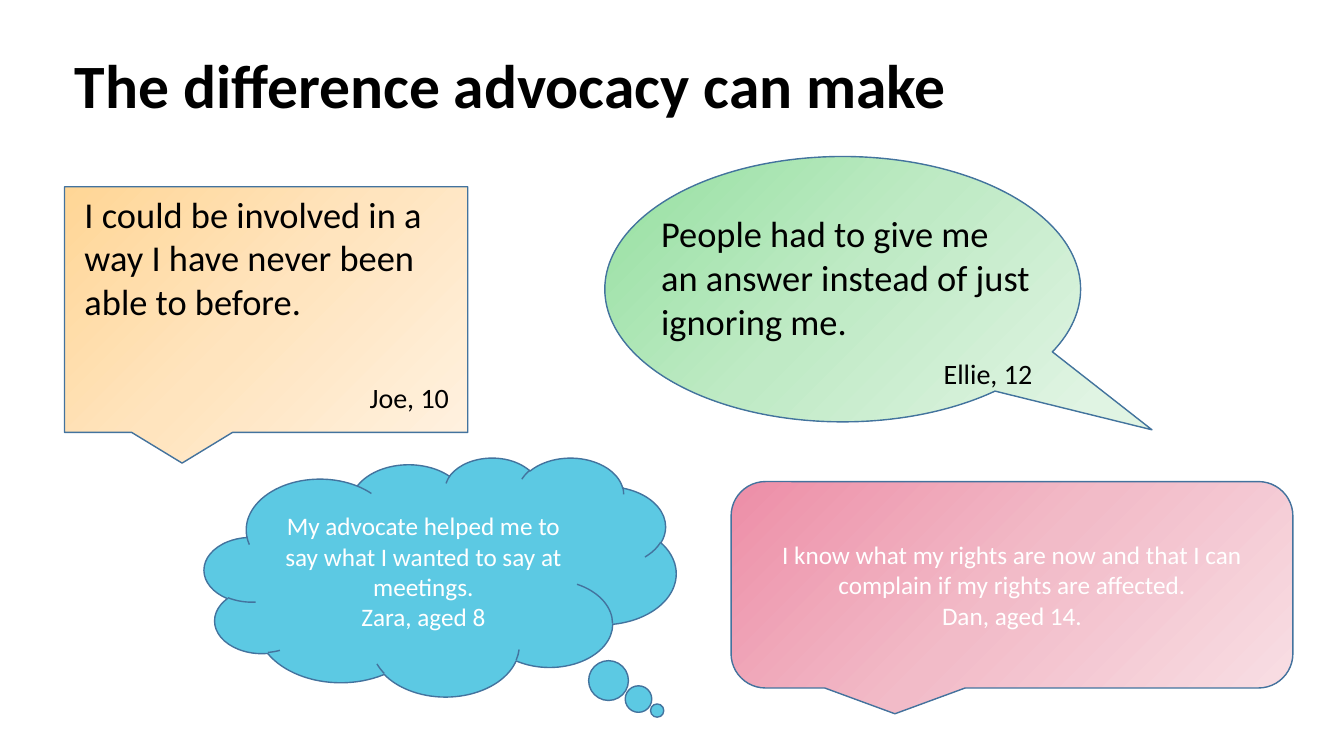
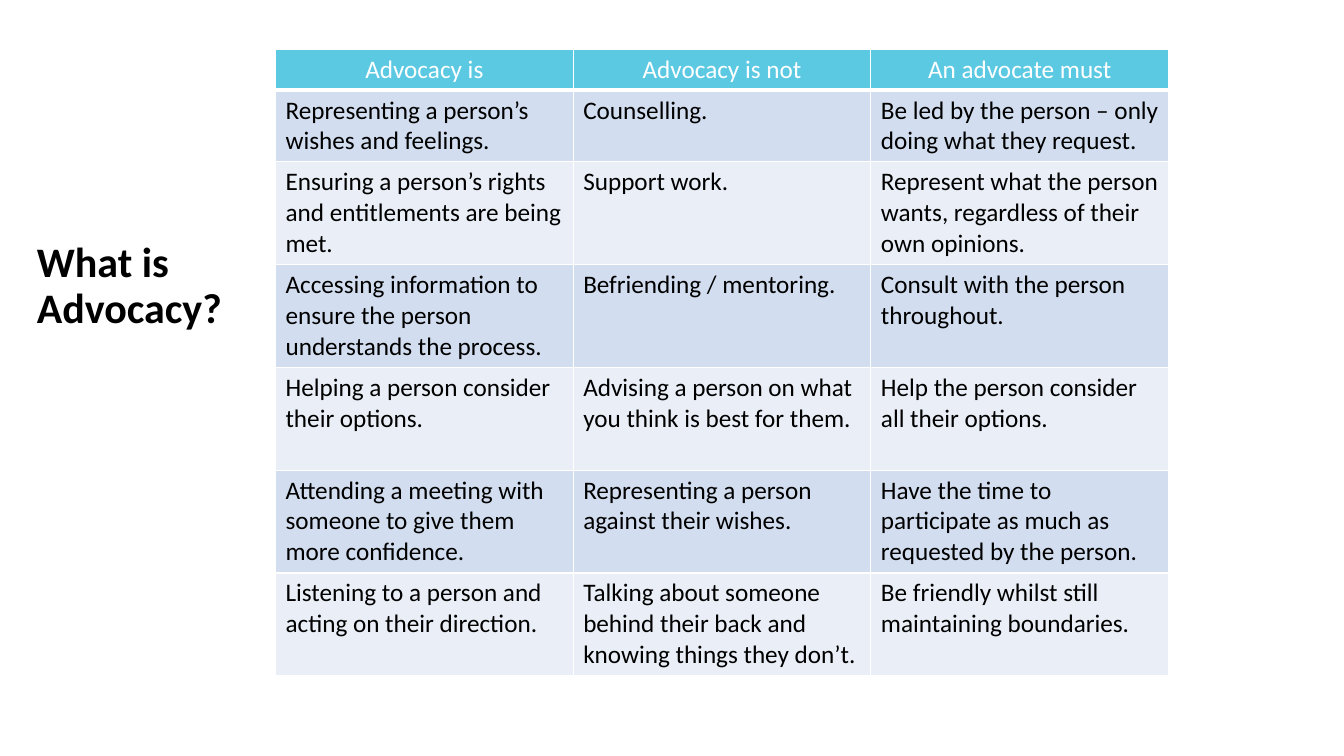
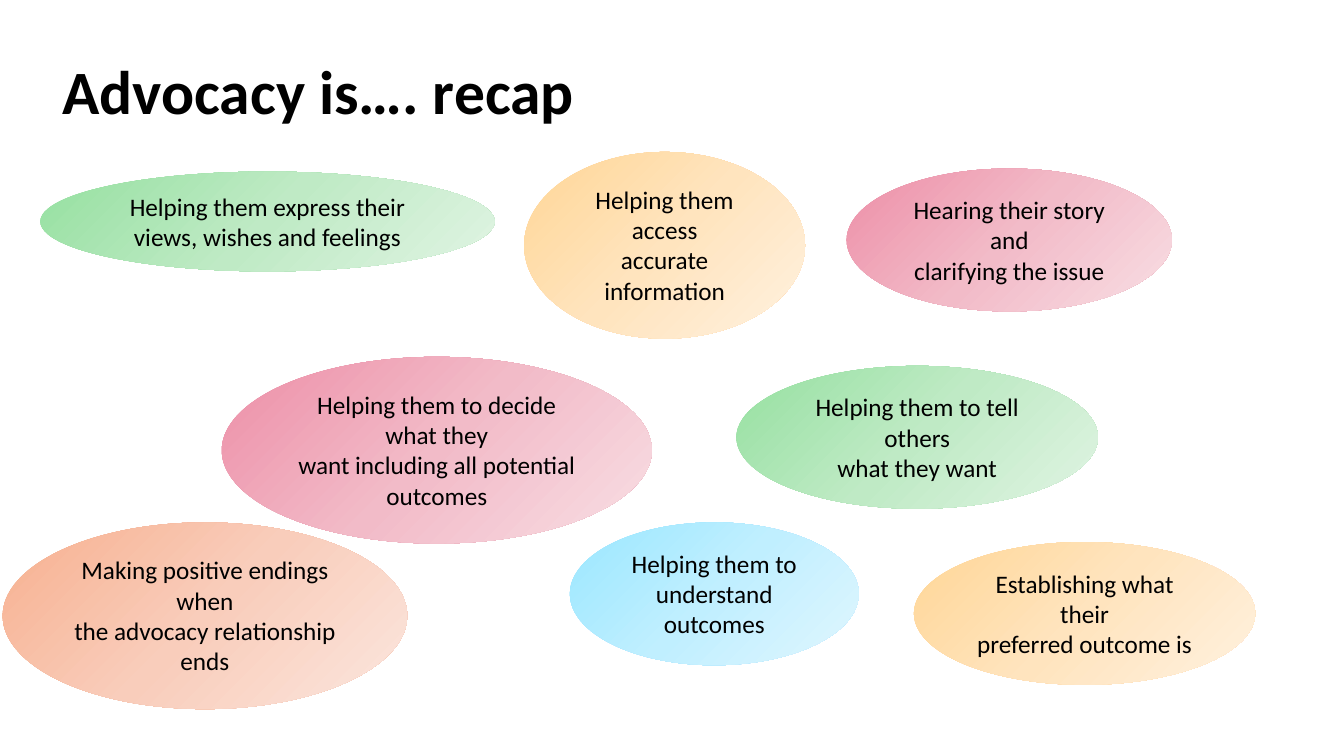
from dataclasses import dataclass

from lxml.etree import SubElement
from copy import deepcopy
from pptx import Presentation
from pptx.dml.color import RGBColor
from pptx.enum.shapes import MSO_SHAPE
from pptx.enum.text import MSO_ANCHOR, MSO_AUTO_SIZE, PP_ALIGN
from pptx.oxml.ns import qn
from pptx.util import Inches, Pt

WIDE, HIGH = Inches(13.333), Inches(7.5)
FONT = "Calibri"

# Colours
BLACK = RGBColor(0x00, 0x00, 0x00)
WHITE = RGBColor(0xFF, 0xFF, 0xFF)
EDGE = RGBColor(0x43, 0x73, 0x9E)
TEAL = RGBColor(0x5C, 0xC9, 0xE3)
BANDS = (RGBColor(0xD2, 0xDE, 0xEF), RGBColor(0xEA, 0xEF, 0xF7))

# Gradients: start, middle, end
AMBER = (RGBColor(0xFF, 0xD6, 0x96), RGBColor(0xFF, 0xE4, 0xBE), RGBColor(0xFF, 0xF1, 0xDF))
GREEN = (RGBColor(0x95, 0xE0, 0xA0), RGBColor(0xBF, 0xEA, 0xC5), RGBColor(0xE0, 0xF4, 0xE3))
PINK = (RGBColor(0xED, 0x8E, 0xA7), RGBColor(0xF2, 0xBB, 0xC8), RGBColor(0xF8, 0xDE, 0xE4))
CORAL = (RGBColor(0xF7, 0xB0, 0x8F), RGBColor(0xF9, 0xCD, 0xBB), RGBColor(0xFB, 0xE6, 0xDE))
SKY = (RGBColor(0x9A, 0xE7, 0xFF), RGBColor(0xC0, 0xEF, 0xFF), RGBColor(0xE0, 0xF6, 0xFE))


@dataclass
class Box:
    """Place and size in percent of the slide."""
    left: float
    top: float
    width: float
    height: float

    def emu(self) -> tuple:
        return (across(self.left), down(self.top),
                across(self.width), down(self.height))


@dataclass
class Bubble:
    box: Box
    fill: tuple | RGBColor
    lines: tuple = ()
    kind: MSO_SHAPE = MSO_SHAPE.OVAL
    tip: tuple = ()
    ink: RGBColor = BLACK
    edge: RGBColor | None = None
    anchor: MSO_ANCHOR = MSO_ANCHOR.TOP


@dataclass
class Quote:
    box: Box
    words: str
    name: str
    gap: float


def across(share: float) -> int:
    return int(WIDE * share / 100)


def down(share: float) -> int:
    return int(HIGH * share / 100)


def style(para, size: float, ink: RGBColor, align=PP_ALIGN.LEFT, bold: bool = False) -> None:
    para.alignment = align
    for run in para.runs:
        font = run.font
        font.name, font.size, font.bold = FONT, Pt(size), bold
        font.color.rgb = ink


def add_page(deck, text: str, box: Box, size: float):
    """Add a slide with its title."""
    page = deck.slides.add_slide(deck.slide_layouts[5])
    title = page.shapes.title
    title.left, title.top, title.width, title.height = box.emu()
    frame = title.text_frame
    frame.text = text
    frame.auto_size = MSO_AUTO_SIZE.NONE
    frame.vertical_anchor = MSO_ANCHOR.MIDDLE
    para = frame.paragraphs[0]
    para.line_spacing = 0.9
    style(para, size, BLACK, bold=True)
    return page


def shade(shape, hues: tuple) -> None:
    """Fill with three evenly spaced stops, slanting down to the right."""
    fill = shape.fill
    fill.gradient()
    fill.gradient_angle = 315
    stops = shape._element.spPr.find(qn("a:gradFill")).find(qn("a:gsLst"))
    stops.insert(1, deepcopy(stops[0]))
    for spot, (stop, hue) in enumerate(zip(fill.gradient_stops, hues)):
        stop.position = spot / 2
        stop.color.rgb = hue


def add_bubble(page, item: Bubble) -> None:
    shape = page.shapes.add_shape(item.kind, *item.box.emu())
    shape.shadow.inherit = False
    for spot, value in enumerate(item.tip):
        shape.adjustments[spot] = value
    if isinstance(item.fill, RGBColor):
        shape.fill.solid()
        shape.fill.fore_color.rgb = item.fill
    else:
        shade(shape, item.fill)
    if item.edge is None:
        shape.line.fill.background()
    else:
        shape.line.color.rgb = item.edge
        shape.line.width = Pt(1)
    if item.lines:
        frame = shape.text_frame
        frame.text = "\n".join(item.lines)
        frame.word_wrap = True
        frame.vertical_anchor = item.anchor
        for para in frame.paragraphs:
            style(para, 18, item.ink, PP_ALIGN.CENTER)


def add_quote(page, item: Quote) -> None:
    frame = page.shapes.add_textbox(*item.box.emu()).text_frame
    frame.word_wrap = True
    frame.text = item.words
    style(frame.paragraphs[0], 26, BLACK)
    name = frame.add_paragraph()
    name.text = item.name
    name.space_before = Pt(item.gap)
    style(name, 20, BLACK, PP_ALIGN.RIGHT)


def add_rule(cell, side: str, width: float) -> None:
    line = SubElement(cell._tc.get_or_add_tcPr(), qn(f"a:ln{side}"), w=str(Pt(width)))
    SubElement(SubElement(line, qn("a:solidFill")), qn("a:srgbClr"), val=str(WHITE))


def add_grid(page, box: Box, rows: tuple, heights: tuple) -> None:
    table = page.shapes.add_table(len(rows), len(rows[0]), *box.emu()).table
    table.horz_banding = False
    for row, high in zip(table.rows, heights):
        row.height = down(high)
    for r, texts in enumerate(rows):
        head = r == 0
        for c, text in enumerate(texts):
            cell = table.cell(r, c)
            for side in "LRTB":
                add_rule(cell, side, 3 if head and side == "B" else 1)
            cell.fill.solid()
            cell.fill.fore_color.rgb = TEAL if head else BANDS[(r - 1) % 2]
            cell.text_frame.text = text
            style(cell.text_frame.paragraphs[0], 18, WHITE if head else BLACK,
                  PP_ALIGN.CENTER if head else PP_ALIGN.LEFT)


# Slide 1: speech bubbles
VOICES = (
    Bubble(Box(4.8, 24.7, 30, 32.5), AMBER, kind=MSO_SHAPE.RECTANGULAR_CALLOUT, edge=EDGE),
    Bubble(Box(45, 20.7, 35.4, 35.1), GREEN, kind=MSO_SHAPE.OVAL_CALLOUT,
           tip=(0.65, 0.53), edge=EDGE),
    Bubble(Box(15.2, 60.5, 35.1, 31.6), TEAL,
           ("My advocate helped me to say what I wanted to say at meetings.", "Zara, aged 8"),
           MSO_SHAPE.CLOUD_CALLOUT, (0.46, 0.56), WHITE, EDGE, MSO_ANCHOR.MIDDLE),
    Bubble(Box(54.4, 63.7, 41.8, 27.3), PINK,
           ("I know what my rights are now and that I can complain if my rights are affected.",
            "Dan, aged 14."),
           MSO_SHAPE.ROUNDED_RECTANGULAR_CALLOUT, (), WHITE, EDGE, MSO_ANCHOR.MIDDLE),
)
QUOTES = (
    Quote(Box(5.55, 24.7, 28.6, 30.9),
          "I could be involved in a way I have never been able to before.", "Joe, 10", 41.5),
    Quote(Box(48.45, 27.3, 29.1, 25.1),
          "People had to give me an answer instead of just ignoring me.", "Ellie, 12", 10),
)

# Slide 2: table
ROWS = (
    ("Advocacy is", "Advocacy is not", "An advocate must"),
    ("Representing a person’s wishes and feelings.", "Counselling.",
     "Be led by the person – only doing what they request."),
    ("Ensuring a person’s rights and entitlements are being met.", "Support work.",
     "Represent what the person wants, regardless of their own opinions."),
    ("Accessing information to ensure the person understands the process.",
     "Befriending / mentoring.", "Consult with the person throughout."),
    ("Helping a person consider their options.",
     "Advising a person on what you think is best for them.",
     "Help the person consider all their options."),
    ("Attending a meeting with someone to give them more confidence.",
     "Representing a person against their wishes.",
     "Have the time to participate as much as requested by the person."),
    ("Listening to a person and acting on their direction.",
     "Talking about someone behind their back and knowing things they don’t.",
     "Be friendly whilst still maintaining boundaries."),
)
HEIGHTS = (5.3, 9.5) + (13.6,) * 5

# Slide 3: ovals
POINTS = (
    Bubble(Box(39, 20.1, 20.9, 24.7), AMBER, ("Helping them access", "accurate information")),
    Bubble(Box(3, 22.7, 33.8, 13.2), GREEN,
           ("Helping them express their views, wishes and feelings",)),
    Bubble(Box(63, 22.3, 24.2, 18.9), PINK, ("Hearing their story and", "clarifying the issue")),
    Bubble(Box(16.5, 47.2, 32, 24.7), PINK,
           ("Helping them to decide what they", "want including all potential outcomes")),
    Bubble(Box(0.2, 69.1, 30.1, 24.7), CORAL,
           ("Making positive endings when", "the advocacy relationship ends")),
    Bubble(Box(42.4, 69.1, 21.5, 18.9), SKY, ("Helping them to", "understand outcomes")),
    Bubble(Box(68, 71.7, 25.4, 18.9), AMBER,
           ("Establishing what their", "preferred outcome is")),
    Bubble(Box(54.8, 48.4, 26.9, 18.9), GREEN,
           ("Helping them to tell others", "what they want")),
)


def main() -> None:
    deck = Presentation()
    deck.slide_width, deck.slide_height = WIDE, HIGH

    page = add_page(deck, "The difference advocacy can make", Box(4.8, 2, 83.2, 19.3), 44)
    for voice in VOICES:
        add_bubble(page, voice)
    for quote in QUOTES:
        add_quote(page, quote)

    page = add_page(deck, "What is Advocacy?", Box(2, 6.5, 17.1, 62.9), 30)
    add_grid(page, Box(20.5, 6.5, 66.45, sum(HEIGHTS)), ROWS, HEIGHTS)

    page = add_page(deck, "Advocacy is…. recap", Box(3.9, 6.3, 84, 12.4), 44)
    for point in POINTS:
        add_bubble(page, point)

    deck.save("out.pptx")


if __name__ == "__main__":
    main()
